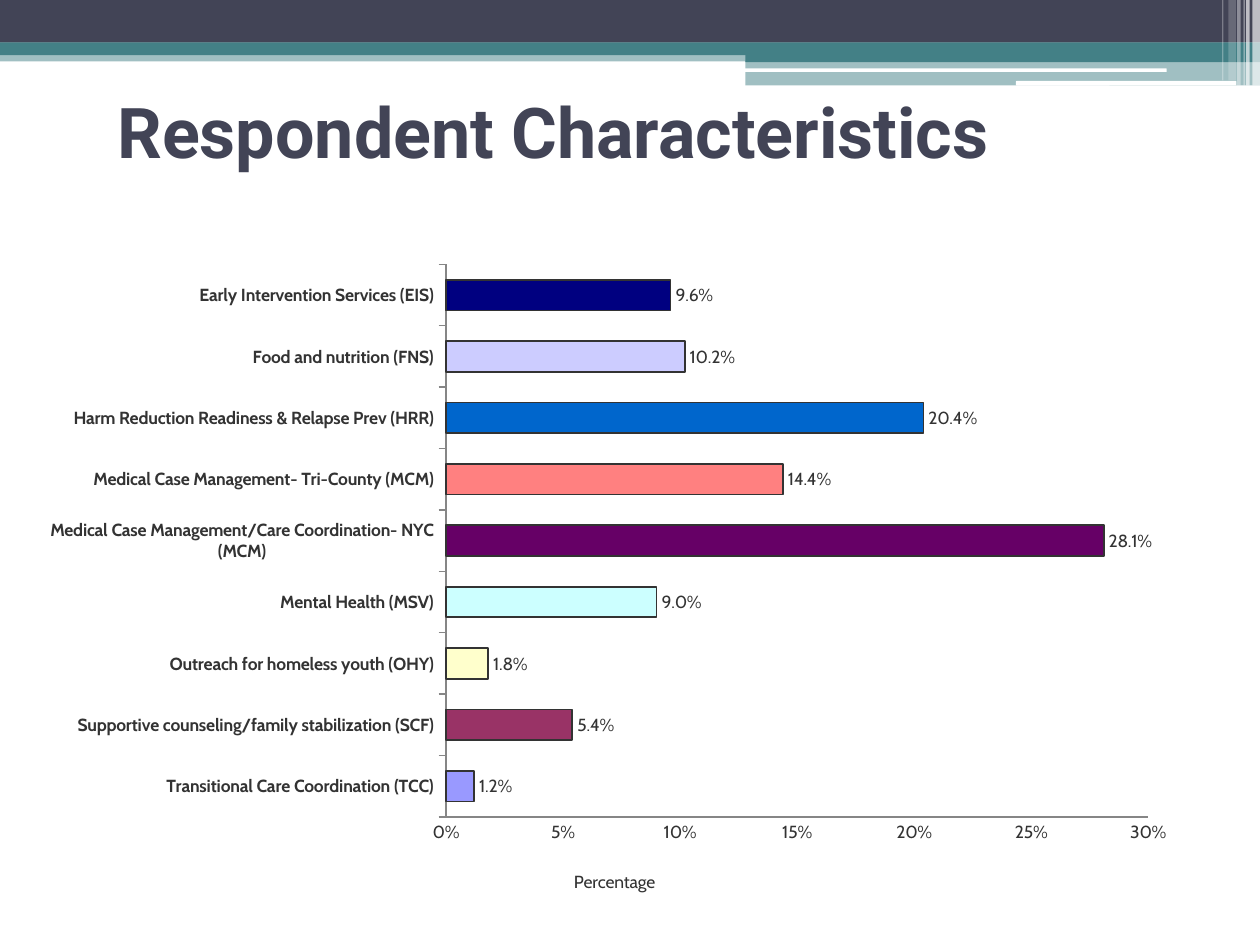
from lxml import etree
from pptx import Presentation
from pptx.chart import data
from pptx.dml.color import RGBColor
from pptx.enum import chart as ch, shapes, text
from pptx.oxml import ns
from pptx.util import Pt

C = {"navy": "424456", "teal": "438086", "white": "FFFFFF", "ink": "333333", "axis": "868686"}


def add_bar(x, y, w, h, color, alpha=100, kind=shapes.MSO_SHAPE.RECTANGLE):
    sp = s.shapes.add_shape(kind, Pt(x), Pt(y), Pt(w), Pt(h))
    sp.shadow.inherit = False
    sp.line.fill.background()
    sp.fill.solid()
    sp.fill.fore_color.rgb = RGBColor.from_string(C[color])
    if alpha < 100:
        clr = sp.fill._xPr.find(".//" + ns.qn("a:srgbClr"))
        etree.SubElement(clr, ns.qn("a:alpha"), val=str(alpha * 1000))


def set_layout(parent, index, **values):
    for old in parent.findall(ns.qn("c:layout")):
        parent.remove(old)
    layout = etree.Element(ns.qn("c:layout"))
    manual = etree.SubElement(layout, ns.qn("c:manualLayout"))
    for tag, val in values.items():
        etree.SubElement(manual, ns.qn("c:" + tag), val=str(val))
    parent.insert(index, layout)


prs = Presentation()
prs.slide_width, prs.slide_height = Pt(720), Pt(540)
s = prs.slides.add_slide(prs.slide_layouts[5])

add_bar(0, 28.5, 720, 6.6, "teal", 50)
add_bar(0, 0, 720, 24.4, "navy")
add_bar(0, 24.3, 720, 7.2, "teal")
add_bar(426, 28.4, 294, 7.1, "teal")
add_bar(426, 34.6, 294, 14.2, "teal", 50)
for x, y, w, h in [(425.5, 39.1, 241.2, 2), (580.5, 46.3, 126, 2.6)]:
    add_bar(x, y, w, h, "white", kind=shapes.MSO_SHAPE.ROUNDED_RECTANGLE)
for x, w, h, alpha in [(715.7, 4.3, 49, 65), (712.1, 2, 49, 65), (710.6, 0.7, 49, 60),
                       (707, 2, 49, 40), (702, 4.3, 46, 20), (698.4, 0.7, 46, 30)]:
    add_bar(x, 0, w, h, "white", alpha)

title = s.shapes.title
title.left, title.top, title.width, title.height = Pt(60), Pt(54), Pt(528), Pt(48)
tf = title.text_frame
tf.text = "Respondent Characteristics"
tf.vertical_anchor = text.MSO_ANCHOR.BOTTOM
p = tf.paragraphs[0]
p.alignment = text.PP_ALIGN.LEFT
p.font.name, p.font.size, p.font.bold = "Roboto", Pt(40), True
p.font.color.rgb = RGBColor.from_string(C["navy"])

services = [
    ("Transitional Care Coordination (TCC)", 0.012, "9999FF"),
    ("Supportive counseling/family stabilization (SCF)", 0.054, "993366"),
    ("Outreach for homeless youth (OHY)", 0.018, "FFFFCC"),
    ("Mental Health (MSV)", 0.09, "CCFFFF"),
    ("Medical Case Management/Care Coordination- NYC (MCM)", 0.281, "660066"),
    ("Medical Case Management- Tri-County (MCM)", 0.144, "FF8080"),
    ("Harm Reduction Readiness & Relapse Prev (HRR)", 0.204, "0066CC"),
    ("Food and nutrition (FNS)", 0.102, "CCCCFF"),
    ("Early Intervention Services (EIS)", 0.096, "000080"),
]
cd = data.CategoryChartData(number_format="0.0%")
cd.categories = [name for name, _, _ in services]
cd.add_series("Series 1", [value for _, value, _ in services])
chart = s.shapes.add_chart(ch.XL_CHART_TYPE.BAR_CLUSTERED, Pt(12), Pt(114), Pt(660), Pt(407.5), cd).chart
chart.has_legend = False
chart.has_title = False
chart.font.name, chart.font.size = "Cabin", Pt(10)
chart.font.color.rgb = RGBColor.from_string(C["ink"])

plot = chart.plots[0]
plot.gap_width = 100
plot.vary_by_categories = False
plot.has_data_labels = True
labels = plot.data_labels
labels.show_value = True
labels.number_format, labels.number_format_is_linked = "0.0%", False
labels.position = ch.XL_LABEL_POSITION.OUTSIDE_END
for i, (_, _, color) in enumerate(services):
    fmt = plot.series[0].points[i].format
    fmt.fill.solid()
    fmt.fill.fore_color.rgb = RGBColor.from_string(color)
    fmt.line.color.rgb = RGBColor.from_string(C["ink"])
    fmt.line.width = Pt(1)

cat, val = chart.category_axis, chart.value_axis
for axis, tick in [(cat, ch.XL_TICK_MARK.OUTSIDE), (val, ch.XL_TICK_MARK.NONE)]:
    axis.has_major_gridlines = False
    axis.major_tick_mark = tick
    axis.minor_tick_mark = ch.XL_TICK_MARK.NONE
    axis.format.line.color.rgb = RGBColor.from_string(C["axis"])
    axis.format.line.width = Pt(0.75)
cat.tick_labels.font.bold = True
val.minimum_scale, val.maximum_scale, val.major_unit = 0, 0.3, 0.05
val.tick_labels.number_format, val.tick_labels.number_format_is_linked = "0%", False
tf = val.axis_title.text_frame
tf.text = "Percentage"
f = tf.paragraphs[0].font
f.name, f.size, f.bold = "Cabin", Pt(10), False
f.color.rgb = RGBColor.from_string(C["ink"])

plot_area = chart._chartSpace.find(".//" + ns.qn("c:plotArea"))
set_layout(plot_area, 0, layoutTarget="inner", xMode="edge", yMode="edge",
           x=0.368, y=0.091, w=0.608, h=0.775)
set_layout(val.axis_title._element, 1, xMode="edge", yMode="edge", x=0.476, y=0.935)

prs.save("out.pptx")
